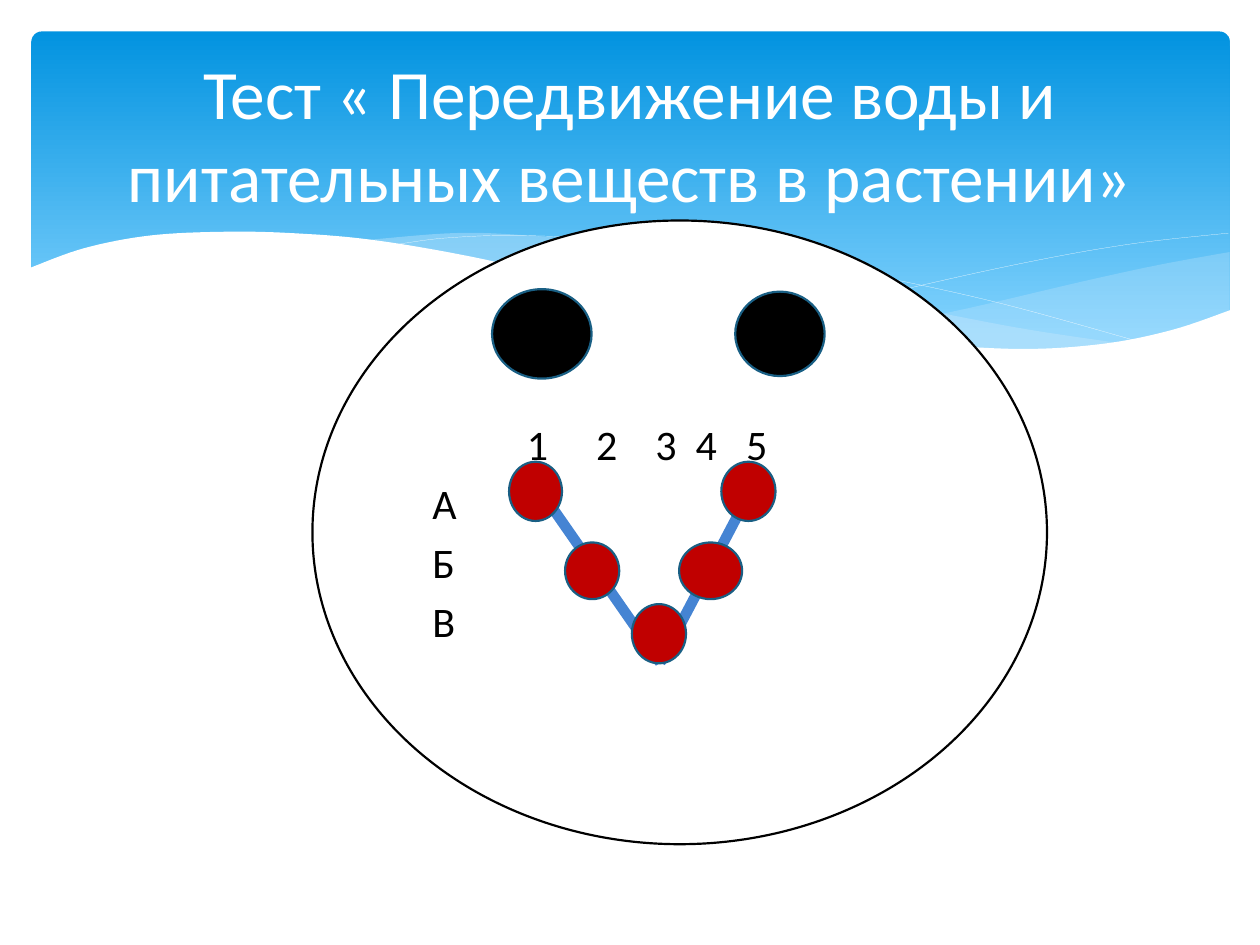
from lxml import etree
from pptx import Presentation
from pptx.dml.color import RGBColor
from pptx.enum.shapes import MSO_CONNECTOR, MSO_SHAPE
from pptx.enum.text import MSO_ANCHOR, MSO_AUTO_SIZE, PP_ALIGN
from pptx.oxml.ns import qn
from pptx.util import Inches, Pt

OVAL, ROUNDED = MSO_SHAPE.OVAL, MSO_SHAPE.ROUNDED_RECTANGLE
STRAIGHT = MSO_CONNECTOR.STRAIGHT
MIDDLE, LEFT, CENTER = MSO_ANCHOR.MIDDLE, PP_ALIGN.LEFT, PP_ALIGN.CENTER
FONT = "Calibri"
COLORS = {
    "sky top": "0293E0", "sky bottom": "83D3FE", "wave": "C6E7FC",
    "white": "FFFFFF", "black": "000000", "outline": "195F84",
    "thread": "4584D3", "bead": "C00000",
}

TITLE = "Тест « Передвижение воды и питательных веществ в растении»"
# Each column number with its tab stop, in inches from the text's left edge
COLUMNS = {"1": 0.75, "2": 1.3, "3": 1.77, "4": 2.09, "5": 2.49}
# Each row letter with the centre height and the size of its beads, in inches
ROWS = {"А": (3.9, 0.47), "Б": (4.53, 0.45), "В": (5.03, 0.47)}

# Boxes are left, top, width, height in inches
SLIDE_SIZE = (10, 7.5)
SKY_BOX = (0.25, 0.25, 9.51, 2.7)
TITLE_BOX = (0.5, 0.37, 9, 1.37)
FACE_BOX = (2.48, 1.75, 5.83, 4.95)

EYE_LEVEL = 2.65
EYES = [(4.3, 0.79, 0.71), (6.19, 0.71, 0.67)]  # centre, width, height
BEADS = [  # row letter, centre, width
    ("А", 4.25, 0.42), ("Б", 4.7, 0.43), ("В", 5.23, 0.43),
    ("А", 5.94, 0.43), ("Б", 5.64, 0.5),
]
THREAD = [(4.3, 3.91), (5.24, 5.26), (5.95, 3.91)]

# Each edge is a few anchor points, joined by a smooth curve
RIGHT_WAVE_TOP = [(9.76, 2), (9.21, 2.1), (8.61, 2.23), (7.53, 2.48), (6.61, 2.65)]
RIGHT_WAVE_BOTTOM = [
    (6.61, 2.65), (7.32, 2.74), (8.03, 2.78), (8.63, 2.75), (9.21, 2.65), (9.76, 2.47),
]
MIDDLE_WAVE_TOP = [
    (8.93, 2.73), (8.07, 2.6), (7.06, 2.4), (6.29, 2.22), (5.55, 2.05),
    (4.89, 1.94), (4.2, 1.87), (3.61, 1.85), (2.86, 1.91),
]
MIDDLE_WAVE_BOTTOM = [
    (2.86, 1.91), (3.62, 2.03), (4.49, 2.22), (5.3, 2.4), (6.18, 2.58),
    (6.95, 2.7), (7.61, 2.77), (8.28, 2.78), (8.93, 2.73),
]
FALLING_LINE = [
    (3.09, 1.95), (3.53, 1.89), (4.16, 1.87), (5.1, 1.92), (6.08, 2.04),
    (6.95, 2.19), (7.95, 2.41), (9.07, 2.72),
]
RISING_LINE = [(6.13, 2.57), (6.95, 2.35), (8.06, 2.1), (8.95, 1.94), (9.75, 1.85)]
HILL_TOP = [
    (9.77, 2.46), (9.3, 2.62), (8.75, 2.73), (8.09, 2.77), (7.26, 2.72), (6.48, 2.62),
    (5.55, 2.45), (4.47, 2.2), (3.65, 2.02), (2.92, 1.9), (2.3, 1.85), (1.77, 1.84),
    (1.19, 1.87), (0.67, 1.97), (0.23, 2.13),
]
HILL_BASE = [(0.23, 3.29), (9.77, 3.29)]

# Filled areas from back to front: edges, fill, opacity in percent
BACK_AREAS = [
    ([RIGHT_WAVE_TOP, RIGHT_WAVE_BOTTOM], "wave", 29),
    ([MIDDLE_WAVE_TOP, MIDDLE_WAVE_BOTTOM], "wave", 40),
]
WAVE_LINES = [FALLING_LINE, RISING_LINE]
FRONT_AREAS = [([HILL_TOP, HILL_BASE], "white", 100)]


def color(name):
    return RGBColor.from_string(COLORS[name])


def smooth(anchors, steps=8):
    """Return points of a Catmull-Rom curve that passes through the anchors."""
    padded = [anchors[0], *anchors, anchors[-1]]
    points = [anchors[0]]
    for before, start, end, after in zip(padded, padded[1:], padded[2:], padded[3:]):
        for step in range(1, steps + 1):
            t = step / steps
            points.append(tuple(
                b + ((c - a) * t + (2 * a - 5 * b + 4 * c - d) * t ** 2
                     + (3 * b - a - 3 * c + d) * t ** 3) / 2
                for a, b, c, d in zip(before, start, end, after)
            ))
    return points


def add_curve(slide, edges, closed):
    """Join the smoothed edges; the builder takes whole units, hence EMU."""
    points = [tuple(map(Inches, point)) for edge in edges for point in smooth(edge)]
    builder = slide.shapes.build_freeform(*points[0])
    builder.add_line_segments(points[1:], close=closed)
    curve = builder.convert_to_shape()
    curve.shadow.inherit = False
    return curve


def set_fill(shape, name):
    shape.fill.solid()
    shape.fill.fore_color.rgb = color(name)


def set_line(shape, name, width):
    shape.line.color.rgb = color(name)
    shape.line.width = Pt(width)


def add_area(slide, edges, fill, opacity):
    area = add_curve(slide, edges, closed=True)
    area.line.fill.background()
    set_fill(area, fill)
    tint = area.element.spPr.find(qn("a:solidFill"))[0]
    etree.SubElement(tint, qn("a:alpha"), val=str(opacity * 1000))


def add_wave_line(slide, anchors):
    curve = add_curve(slide, [anchors], closed=False)
    curve.fill.background()
    set_line(curve, "white", 0.1)


def add_preset(slide, kind, box):
    shape = slide.shapes.add_shape(kind, *map(Inches, box))
    shape.shadow.inherit = False
    return shape


def add_disc(slide, center_x, center_y, width, height, fill):
    box = (center_x - width / 2, center_y - height / 2, width, height)
    disc = add_preset(slide, OVAL, box)
    set_fill(disc, fill)
    set_line(disc, "outline", 1.25)


def add_sky(slide):
    sky = add_preset(slide, ROUNDED, SKY_BOX)
    sky.adjustments[0] = 0.03
    sky.line.fill.background()
    sky.fill.gradient()
    sky.fill.gradient_angle = 270
    stops = [("sky top", 0), ("sky bottom", 0.9)]
    for stop, (name, position) in zip(sky.fill.gradient_stops, stops):
        stop.color.rgb = color(name)
        stop.position = position


def add_background(slide):
    add_sky(slide)
    for area in BACK_AREAS:
        add_area(slide, *area)
    for anchors in WAVE_LINES:
        add_wave_line(slide, anchors)
    for area in FRONT_AREAS:
        add_area(slide, *area)


def write_text(shape, text, size, name, alignment):
    frame = shape.text_frame
    frame.text = text
    frame.word_wrap = True
    frame.auto_size = MSO_AUTO_SIZE.NONE
    frame.vertical_anchor = MIDDLE
    for paragraph in frame.paragraphs:
        paragraph.alignment = alignment
        for run in paragraph.runs:
            run.font.name = FONT
            run.font.size = Pt(size)
            run.font.color.rgb = color(name)
    return frame.paragraphs


def add_face(slide):
    face = add_preset(slide, OVAL, FACE_BOX)
    set_fill(face, "white")
    set_line(face, "black", 1.25)
    header = "".join(f"\t{number}" for number in COLUMNS)
    paragraphs = write_text(face, "\n".join([header, *ROWS]), 24, "black", LEFT)
    for paragraph in paragraphs:
        paragraph.space_before = Pt(4.8)
    tabs = etree.SubElement(paragraphs[0]._p.get_or_add_pPr(), qn("a:tabLst"))
    for position in COLUMNS.values():
        etree.SubElement(tabs, qn("a:tab"), pos=str(Inches(position)), algn="l")


def place_title(slide):
    """Format the title and bring it in front of the sky and the face."""
    title = slide.shapes.title
    title.left, title.top, title.width, title.height = map(Inches, TITLE_BOX)
    write_text(title, TITLE, 39.6, "white", CENTER)
    title.element.getparent().append(title.element)


def add_thread(slide, start, end):
    thread = slide.shapes.add_connector(STRAIGHT, *map(Inches, start + end))
    set_line(thread, "thread", 6)
    etree.SubElement(thread.element.spPr, qn("a:effectLst"))


def main():
    presentation = Presentation()
    presentation.slide_width, presentation.slide_height = map(Inches, SLIDE_SIZE)
    slide = presentation.slides.add_slide(presentation.slide_layouts[5])
    add_background(slide)
    add_face(slide)
    place_title(slide)
    for center, width, height in EYES:
        add_disc(slide, center, EYE_LEVEL, width, height, "black")
    for start, end in zip(THREAD, THREAD[1:]):
        add_thread(slide, start, end)
    for letter, center, width in BEADS:
        level, height = ROWS[letter]
        add_disc(slide, center, level, width, height, "bead")
    presentation.save("out.pptx")


if __name__ == "__main__":
    main()
